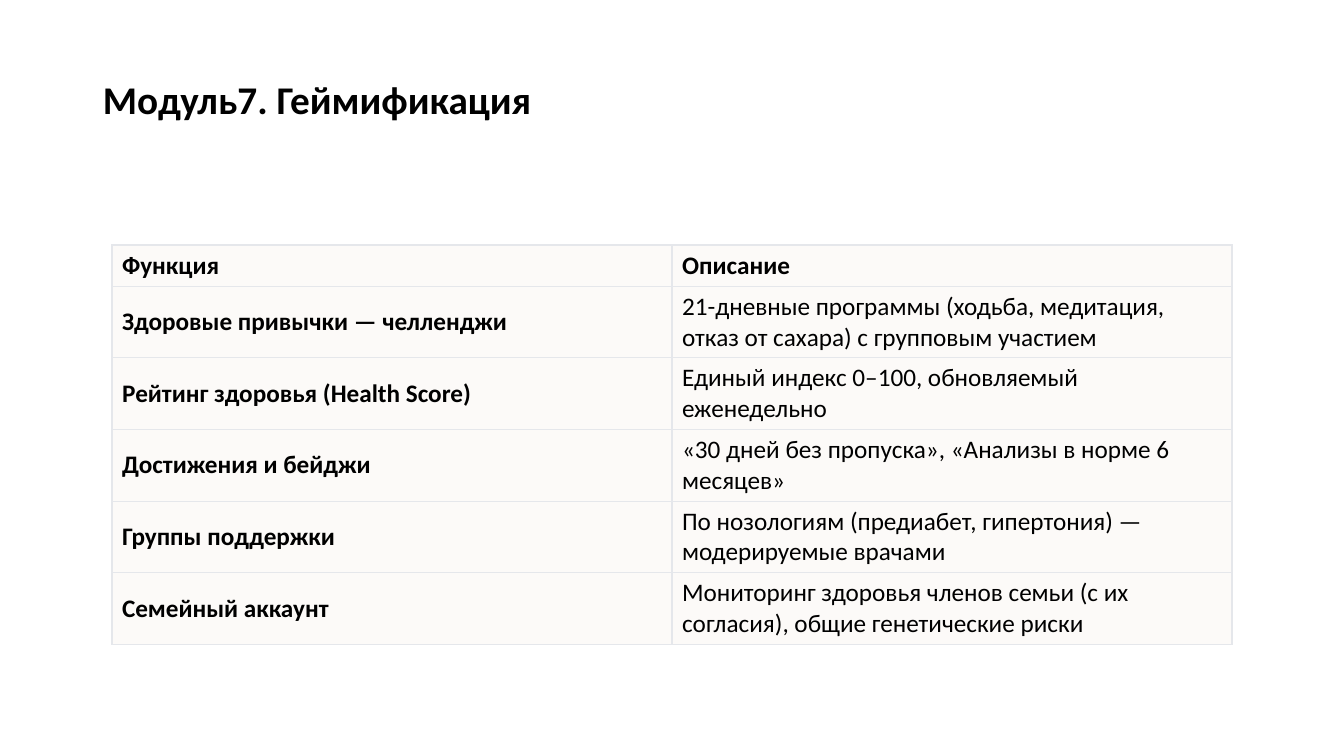
from lxml.etree import SubElement
from pptx import Presentation
from pptx.dml.color import RGBColor
from pptx.enum.text import MSO_ANCHOR, PP_ALIGN
from pptx.oxml.ns import qn
from pptx.util import Inches, Pt

WIDTH, HEIGHT = Inches(13.33), Inches(7.5)
TEXT, CELL_FILL, BORDER = "000000", "FCFAF8", "E5E7EB"
HEADER_HEIGHT, ROW_HEIGHT = Inches(0.41), Inches(0.71)

FEATURES = [
    ("Функция", "Описание"),
    ("Здоровые привычки — челленджи",
     "21-дневные программы (ходьба, медитация, отказ от сахара) с групповым участием"),
    ("Рейтинг здоровья (Health Score)",
     "Единый индекс 0–100, обновляемый еженедельно"),
    ("Достижения и бейджи",
     "«30 дней без пропуска», «Анализы в норме 6 месяцев»"),
    ("Группы поддержки",
     "По нозологиям (предиабет, гипертония) — модерируемые врачами"),
    ("Семейный аккаунт",
     "Мониторинг здоровья членов семьи (с их согласия), общие генетические риски"),
]


def rgb(value):
    return RGBColor.from_string(value)


def write(tf, text, **font):
    p = tf.paragraphs[0]
    p.alignment = PP_ALIGN.LEFT
    r = p.add_run()
    r.text = text
    for name, value in ({"name": "Calibri"} | font).items():
        setattr(r.font, name, value)
    r.font.color.rgb = rgb(TEXT)
    return p


def add_title(s, text):
    sp = s.shapes.title
    box = {"left": 0.069, "top": 0.053, "width": 0.863, "height": 0.164}
    for name, share in box.items():
        side = WIDTH if name in ("left", "width") else HEIGHT
        setattr(sp, name, int(side * share))
    sp.text_frame.vertical_anchor = MSO_ANCHOR.MIDDLE
    p = write(sp.text_frame, text, size=Pt(28), bold=True)
    p.line_spacing = 0.9


def set_borders(cell):
    """Draw the four cell edges; they must precede the fill in the XML."""
    tc_pr = cell._tc.get_or_add_tcPr()
    for edge in ("a:lnL", "a:lnR", "a:lnT", "a:lnB"):
        ln = SubElement(tc_pr, qn(edge), w=str(Pt(1)))
        fill = SubElement(ln, qn("a:solidFill"))
        SubElement(fill, qn("a:srgbClr"), val=BORDER)


def format_cell(cell, text, header, bold):
    set_borders(cell)
    cell.fill.solid()
    cell.fill.fore_color.rgb = rgb(CELL_FILL)
    cell.vertical_anchor = MSO_ANCHOR.BOTTOM if header else MSO_ANCHOR.MIDDLE
    write(cell.text_frame, text, size=Pt(18), bold=bold)


def add_feature_table(s, rows):
    heights = [HEADER_HEIGHT] + [ROW_HEIGHT] * (len(rows) - 1)
    table = s.shapes.add_table(
        len(rows), len(rows[0]), int(WIDTH / 12), int(HEIGHT * 0.324),
        int(WIDTH * 10 / 12), sum(heights)).table
    for i, texts in enumerate(rows):
        table.rows[i].height = heights[i]
        for j, text in enumerate(texts):
            format_cell(table.cell(i, j), text, header=i == 0, bold=i == 0 or j == 0)


def main():
    prs = Presentation()
    prs.slide_width, prs.slide_height = WIDTH, HEIGHT
    s = prs.slides.add_slide(prs.slide_layouts[5])
    add_title(s, "Модуль7. Геймификация")
    add_feature_table(s, FEATURES)
    prs.save("out.pptx")


if __name__ == "__main__":
    main()
